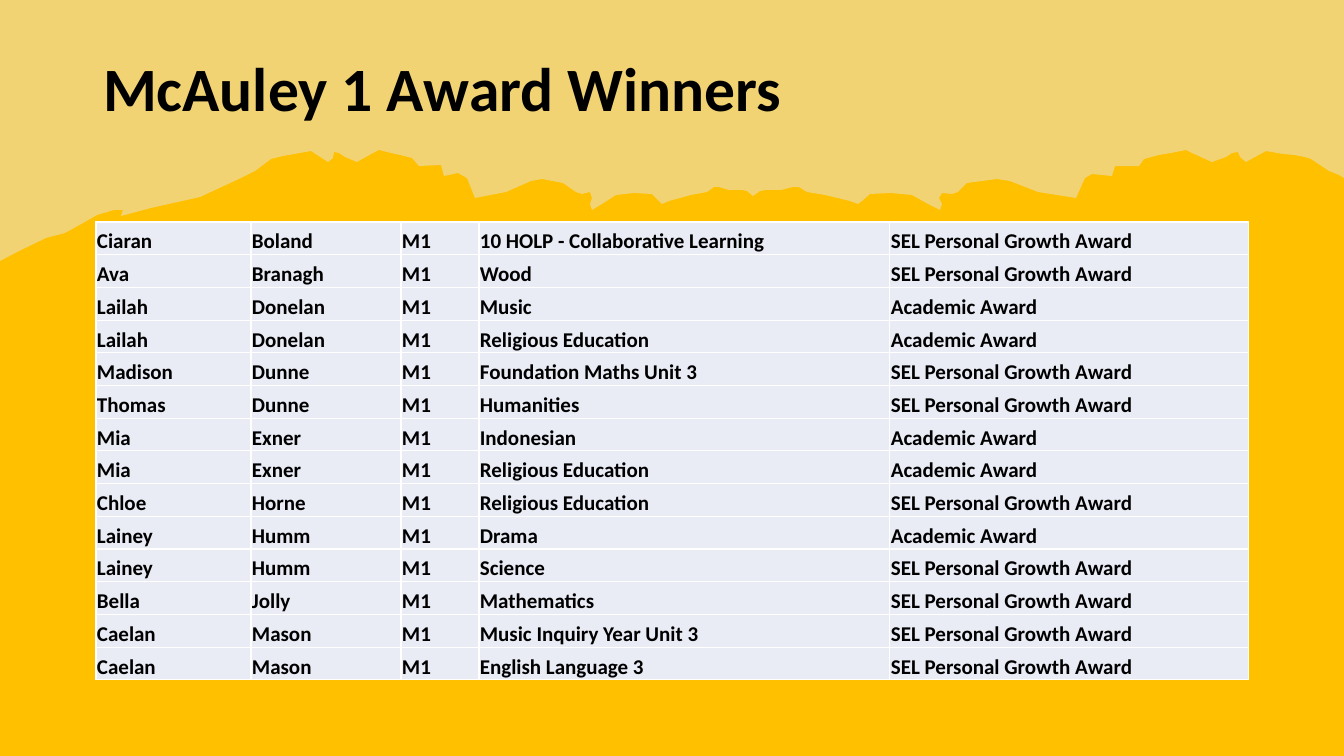
from lxml.etree import SubElement
from pptx import Presentation
from pptx.dml.color import RGBColor
from pptx.enum.text import MSO_ANCHOR, PP_ALIGN
from pptx.oxml import parse_xml
from pptx.oxml.ns import nsdecls, qn
from pptx.util import Emu, Pt

WIDTH, HEIGHT = 1344, 756
SCALE = 12192000 / WIDTH

RIDGE = [
    (0, 261), (19, 251), (46, 238), (65, 233), (83, 223), (97, 215), (114, 210),
    (123, 210), (121, 216), (136, 212), (151, 208), (200, 197), (241, 178),
    (255, 171), (263, 165), (271, 159), (283, 156), (311, 151), (328, 162),
    (333, 158), (334, 152), (339, 153), (345, 157), (357, 162), (373, 153),
    (379, 150), (391, 153), (400, 155), (412, 158), (419, 166), (441, 165),
    (444, 176), (458, 173), (467, 178), (475, 198), (506, 192), (531, 181),
    (542, 179), (563, 183), (576, 192), (582, 194), (590, 192), (592, 198),
    (590, 204), (592, 210), (602, 204), (616, 195), (634, 193), (652, 194),
    (659, 201), (662, 204), (669, 201), (691, 195), (707, 192), (714, 187),
    (719, 187), (729, 190), (742, 190), (747, 191), (753, 196), (760, 191),
    (766, 190), (781, 190), (793, 187), (799, 187), (807, 192), (825, 195),
    (850, 201), (858, 204), (862, 201), (870, 194), (891, 193), (912, 195),
    (928, 204), (940, 210), (942, 204), (939, 198), (942, 193), (952, 194),
    (958, 192), (967, 183), (997, 179), (1010, 181), (1038, 192), (1076, 198),
    (1085, 178), (1092, 174), (1112, 176), (1115, 166), (1139, 166), (1144, 159),
    (1159, 155), (1171, 153), (1186, 150), (1192, 153), (1212, 162), (1226, 157),
    (1232, 153), (1238, 152), (1240, 157), (1246, 162), (1266, 151), (1283, 154),
    (1294, 155), (1305, 157), (1311, 159), (1320, 165), (1329, 171), (1339, 175),
    (1344, 178),
]

GROWTH, ACADEMIC = "SEL Personal Growth Award", "Academic Award"
WINNERS = [
    ("Ciaran", "Boland", "10 HOLP - Collaborative Learning", GROWTH),
    ("Ava", "Branagh", "Wood", GROWTH),
    ("Lailah", "Donelan", "Music", ACADEMIC),
    ("Lailah", "Donelan", "Religious Education", ACADEMIC),
    ("Madison", "Dunne", "Foundation Maths Unit 3", GROWTH),
    ("Thomas", "Dunne", "Humanities", GROWTH),
    ("Mia", "Exner", "Indonesian", ACADEMIC),
    ("Mia", "Exner", "Religious Education", ACADEMIC),
    ("Chloe", "Horne", "Religious Education", GROWTH),
    ("Lainey", "Humm", "Drama", ACADEMIC),
    ("Lainey", "Humm", "Science", GROWTH),
    ("Bella", "Jolly", "Mathematics", GROWTH),
    ("Caelan", "Mason", "Music Inquiry Year Unit 3", GROWTH),
    ("Caelan", "Mason", "English Language 3", GROWTH),
]


def px(length):
    return Emu(round(length * SCALE))


def paint(fill, color):
    fill.solid()
    fill.fore_color.rgb = RGBColor.from_string(color)


class AwardSlide:
    """Draws styled elements on one slide."""

    font = "Calibri"
    ink = "000000"

    def __init__(self, deck, background):
        self.page = deck.slides.add_slide(deck.slide_layouts[5])
        paint(self.page.background.fill, background)

    def style(self, para, size):
        para.alignment = PP_ALIGN.LEFT
        para.font.name = self.font
        para.font.size = Pt(size)
        para.font.bold = True
        para.font.color.rgb = RGBColor.from_string(self.ink)

    def outline(self, points, color, opacity):
        corners = [(px(x), px(y)) for x, y in points]
        builder = self.page.shapes.build_freeform(*corners[0])
        builder.add_line_segments(corners[1:], close=True)
        shape = builder.convert_to_shape()
        shape.shadow.inherit = False
        shape.line.fill.background()
        paint(shape.fill, color)
        color_node = shape.element.spPr.find(qn("a:solidFill"))[0]
        SubElement(color_node, qn("a:alpha")).set("val", str(opacity * 1000))

    def title(self, text, left, top, width, height, size):
        box = self.page.shapes.title
        box.left, box.top, box.width, box.height = map(px, (left, top, width, height))
        box.text_frame.text = text
        box.text_frame.vertical_anchor = MSO_ANCHOR.MIDDLE
        para = box.text_frame.paragraphs[0]
        para.line_spacing = 0.9
        self.style(para, size)
        box.element.getparent().append(box.element)

    def table(self, rows, left, top, widths, height, size, color, border):
        frame = self.page.shapes.add_table(
            len(rows), len(widths), px(left), px(top), px(sum(widths)), px(height))
        grid = frame.table
        grid.first_row = grid.horz_banding = False
        for column, width in zip(grid.columns, widths):
            column.width = px(width)
        for row, texts in zip(grid.rows, rows):
            row.height = px(height / len(rows))
            for cell, text in zip(row.cells, texts):
                cell.text = text
                cell.vertical_anchor = MSO_ANCHOR.BOTTOM
                cell.margin_left = cell.margin_right = cell.margin_top = px(1)
                cell.margin_bottom = 0
                self.style(cell.text_frame.paragraphs[0], size)
                paint(cell.fill, color)
                self.frame_cell(cell, border)

    def frame_cell(self, cell, color):
        properties = cell._tc.get_or_add_tcPr()
        for place, side in enumerate(("lnL", "lnR", "lnT", "lnB")):
            properties.insert(place, parse_xml(
                f'<a:{side} {nsdecls("a")} w="{Pt(1)}"><a:solidFill>'
                f'<a:srgbClr val="{color}"/></a:solidFill></a:{side}>'))


def main():
    deck = Presentation()
    deck.slide_width, deck.slide_height = px(WIDTH), px(HEIGHT)
    slide = AwardSlide(deck, "FFC000")
    slide.outline(RIDGE + [(WIDTH, 0), (0, 0)], "E7E6E6", 50)
    slide.title("McAuley 1 Award Winners", 93, 40, 1159, 103, 44)
    rows = [(first, last, "M1", subject, award) for first, last, subject, award in WINNERS]
    slide.table(rows, 96, 222, (155, 150, 78, 411, 359), 458, 15, "E9EBF5", "FFFFFF")
    deck.save("out.pptx")


if __name__ == "__main__":
    main()
